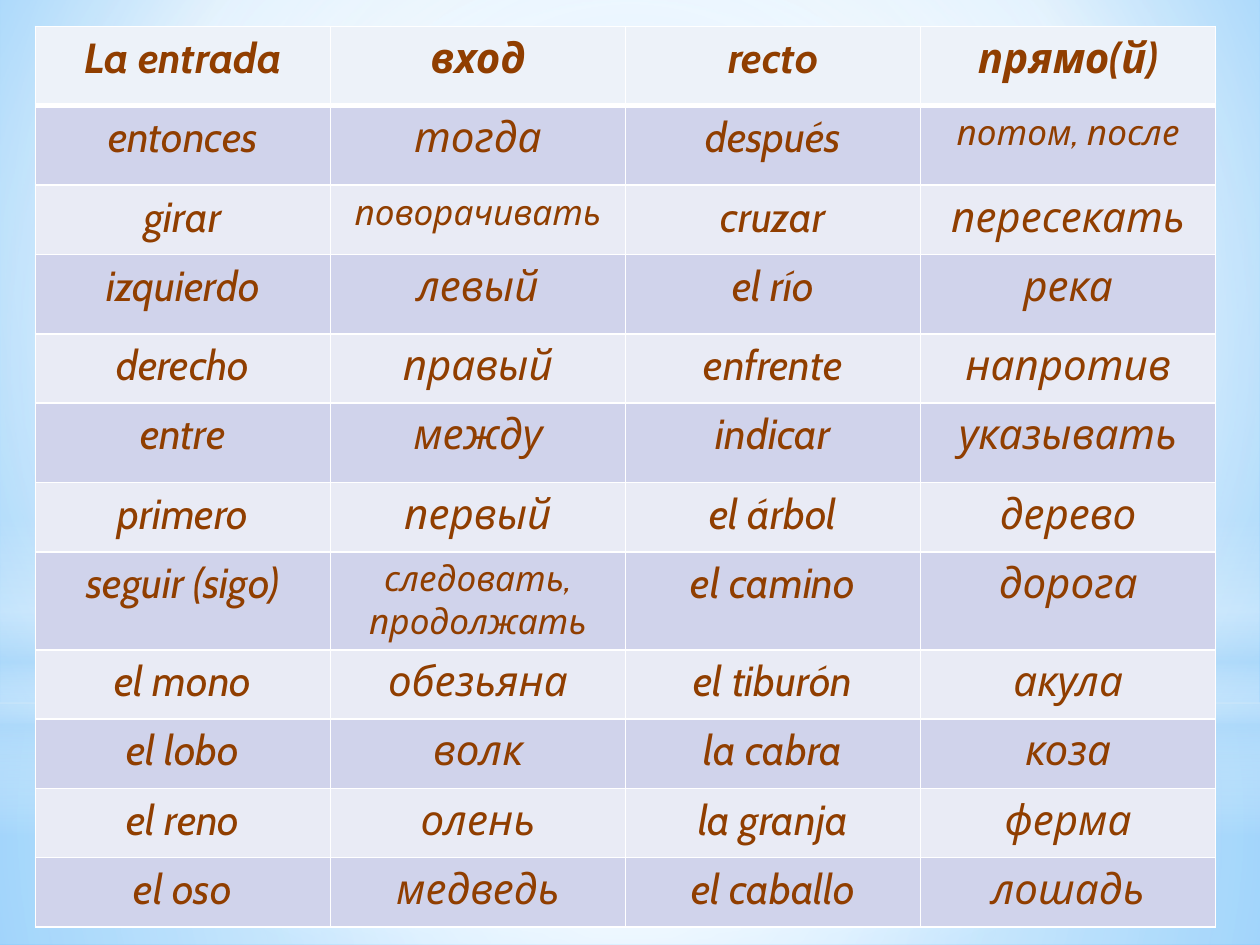
from dataclasses import dataclass

from lxml.etree import SubElement
from pptx import Presentation
from pptx.dml.color import RGBColor
from pptx.enum.shapes import MSO_SHAPE as Preset
from pptx.enum.text import PP_ALIGN as Align
from pptx.oxml.ns import qn
from pptx.util import Inches, Pt

WIDTH, HEIGHT = Inches(10), Inches(7.5)
FONT, INK, WHITE, SKY = "Cabin", "903E00", "FFFFFF", "B4DCFA"
HEADER_FILL, BAND_FILLS = "EDF2F9", ("D0D3EB", "E9EBF5")
TEXT_SIZE, SMALL_SIZE = 24, 20
TALL_ROW, LOW_ROW = 0.63, 0.55
TALL_ROWS = {0, 1, 3, 5}
SMALL_WORDS = {"потом, после", "поворачивать", "следовать, продолжать"}

WORDS = [
    ("La entrada", "вход", "recto", "прямо(й)"),
    ("entonces", "тогда", "después", "потом, после"),
    ("girar", "поворачивать", "cruzar", "пересекать"),
    ("izquierdo", "левый", "el río", "река"),
    ("derecho", "правый", "enfrente", "напротив"),
    ("entre", "между", "indicar", "указывать"),
    ("primero", "первый", "el árbol", "дерево"),
    ("seguir (sigo)", "следовать, продолжать", "el camino", "дорога"),
    ("el mono", "обезьяна", "el tiburón", "акула"),
    ("el lobo", "волк", "la cabra", "коза"),
    ("el reno", "олень", "la granja", "ферма"),
    ("el oso", "медведь", "el caballo", "лошадь"),
]


@dataclass
class Gradient:
    """Stops are (position, colour, opacity) in percent; focus None means a vertical blend."""
    stops: list[tuple[int, str, int]]
    focus: tuple[int, int, int, int] | None = (50, 50, 50, 50)


@dataclass
class Glow:
    """A full-width layer; top and height are shares of the slide's height."""
    preset: Preset
    top: float
    height: float
    gradient: Gradient


BACKDROP = Gradient([(0, "9ED5FF", 100), (60, WHITE, 100), (100, "5BB9FF", 100)],
                    (20, 10, 20, 60))
HORIZON = 0.744
GLOWS = [
    Glow(Preset.RECTANGLE, HORIZON, 1 - HORIZON,
         Gradient([(0, WHITE, 91), (37, WHITE, 76), (100, SKY, 79)])),
    Glow(Preset.RECTANGLE, 0, HORIZON,
         Gradient([(0, WHITE, 89), (48, WHITE, 62), (100, SKY, 79)])),
    Glow(Preset.RECTANGLE, 0.55, 0.333,
         Gradient([(0, WHITE, 0), (29, WHITE, 30), (45, SKY, 40),
                   (55, WHITE, 26), (65, SKY, 60), (100, WHITE, 0)], None)),
    Glow(Preset.OVAL, 0.233, HORIZON,
         Gradient([(0, WHITE, 100), (56, WHITE, 0)])),
]


def color(code: str) -> RGBColor:
    return RGBColor.from_string(code)


def paint(fill, properties, gradient: Gradient) -> None:
    """Put the gradient where a plain fill of the same properties element stands."""
    fill.solid()
    solid = properties.find(qn("a:solidFill"))
    blend = SubElement(properties, qn("a:gradFill"), rotWithShape="1")
    properties.replace(solid, blend)
    stop_list = SubElement(blend, qn("a:gsLst"))
    for position, code, opacity in gradient.stops:
        stop = SubElement(stop_list, qn("a:gs"), pos=str(position * 1000))
        tint = SubElement(stop, qn("a:srgbClr"), val=code)
        if opacity < 100:
            SubElement(tint, qn("a:alpha"), val=str(opacity * 1000))
    if gradient.focus is None:
        SubElement(blend, qn("a:lin"), ang=str(90 * 60000), scaled="0")
    else:
        route = SubElement(blend, qn("a:path"))
        route.set("path", "circle")
        sides = {side: str(share * 1000) for side, share in zip("ltrb", gradient.focus)}
        SubElement(route, qn("a:fillToRect"), **sides)


def add_glow(page, glow: Glow) -> None:
    shape = page.shapes.add_shape(glow.preset, 0, int(HEIGHT * glow.top),
                                  WIDTH, int(HEIGHT * glow.height))
    shape.shadow.inherit = False
    shape.line.fill.background()
    paint(shape.fill, shape.element.spPr, glow.gradient)


def set_borders(cell, top: int, bottom: int) -> None:
    properties = cell._tc.get_or_add_tcPr()
    widths = {"L": 1, "R": 1, "T": top, "B": bottom}
    for index, (side, width) in enumerate(widths.items()):
        line = SubElement(properties, qn(f"a:ln{side}"), w=str(Pt(width)))
        solid = SubElement(line, qn("a:solidFill"))
        SubElement(solid, qn("a:srgbClr"), val=WHITE)
        properties.insert(index, line)


def fill_cell(cell, word: str, row: int) -> None:
    cell.text = word
    para = cell.text_frame.paragraphs[0]
    para.alignment = Align.CENTER
    font = para.font
    font.name, font.italic, font.bold = FONT, True, row == 0
    font.size = Pt(SMALL_SIZE if word in SMALL_WORDS else TEXT_SIZE)
    font.color.rgb = color(INK)
    cell.fill.solid()
    cell.fill.fore_color.rgb = color(BAND_FILLS[(row - 1) % 2] if row else HEADER_FILL)
    set_borders(cell, top=3 if row == 1 else 1, bottom=3 if row == 0 else 1)


def add_vocabulary(page) -> None:
    frame = page.shapes.add_table(len(WORDS), len(WORDS[0]), Inches(0.28), Inches(0.21),
                                  Inches(9.37), Inches(7.15))
    table = frame.table
    for row, words in enumerate(WORDS):
        table.rows[row].height = Inches(TALL_ROW if row in TALL_ROWS else LOW_ROW)
        for column, word in enumerate(words):
            fill_cell(table.cell(row, column), word, row)


def main() -> None:
    deck = Presentation()
    deck.slide_width, deck.slide_height = WIDTH, HEIGHT
    page = deck.slides.add_slide(deck.slide_layouts[6])
    backdrop_fill = page.background.fill
    paint(backdrop_fill, page.element.find(".//" + qn("p:bgPr")), BACKDROP)
    for glow in GLOWS:
        add_glow(page, glow)
    add_vocabulary(page)
    deck.save("out.pptx")


if __name__ == "__main__":
    main()
